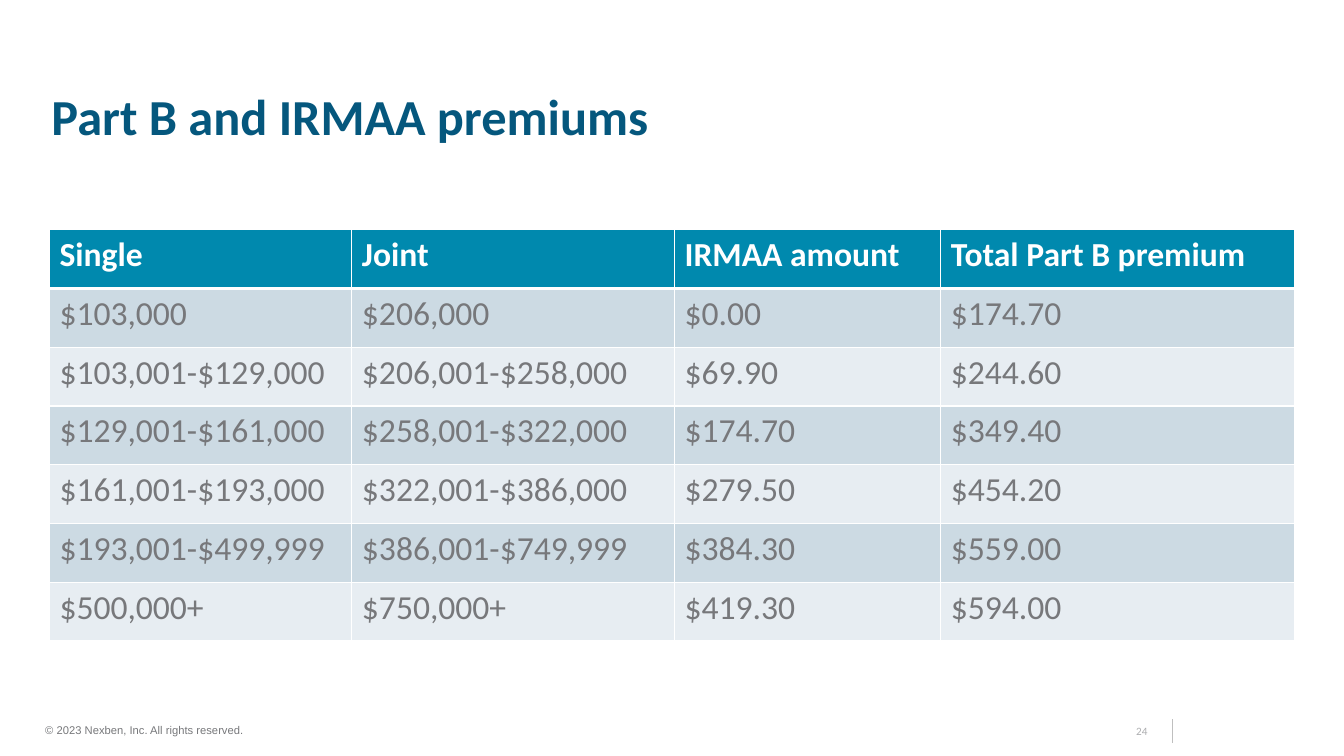
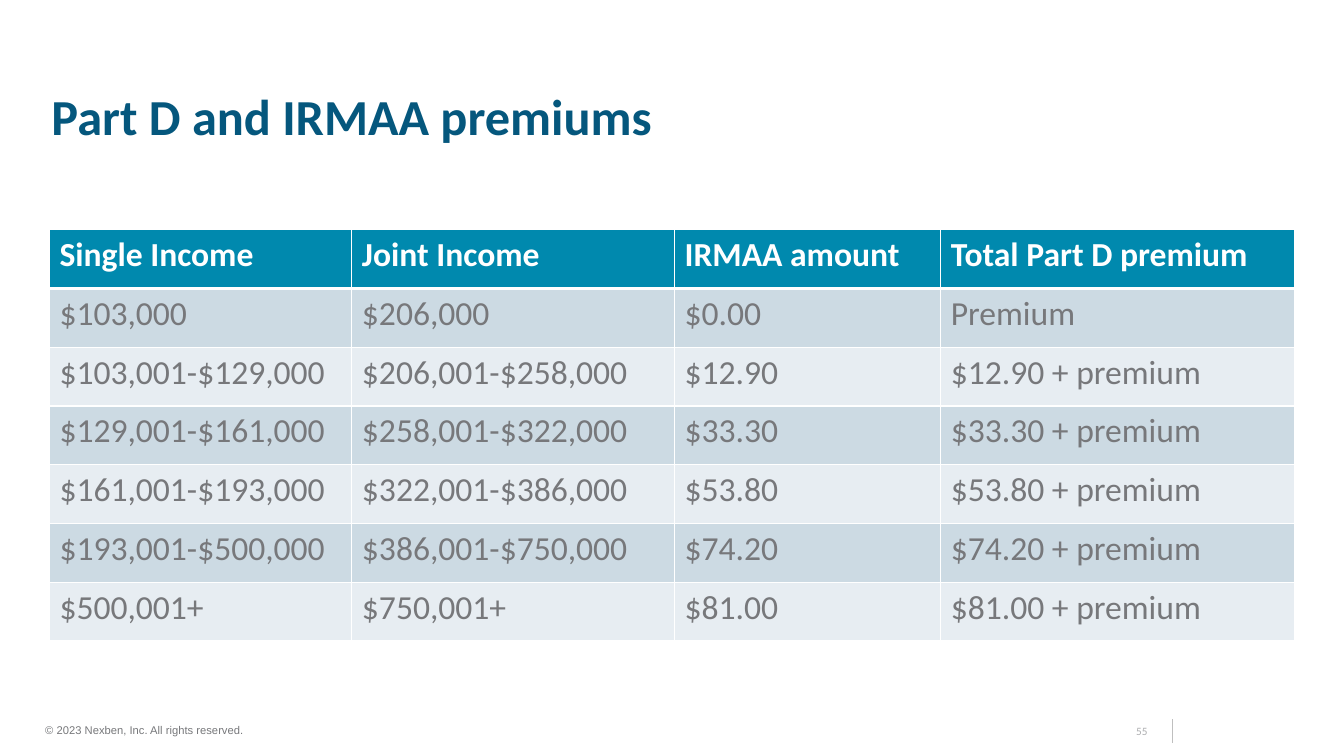
from pptx import Presentation
from pptx.dml.color import RGBColor
from pptx.enum.shapes import MSO_CONNECTOR
from pptx.enum.text import MSO_ANCHOR, MSO_AUTO_SIZE, PP_ALIGN
from pptx.oxml.ns import qn
from pptx.util import Inches, Pt
from lxml.etree import SubElement

WHITE = "FFFFFF"
NAVY = "05577D"
TEAL = "0089AE"
GRAY = "77787B"
PALE = "ADAEB0"
RULE = "BFBFBF"
BANDS = ("E7EDF2", "CCDAE3")
COLS = (3, 3.2, 2.64, 3.51)
ROW = 0.583

PART_B = [
    ("Single", "Joint", "IRMAA amount", "Total Part B premium"),
    ("$103,000", "$206,000", "$0.00", "$174.70"),
    ("$103,001-$129,000", "$206,001-$258,000", "$69.90", "$244.60"),
    ("$129,001-$161,000", "$258,001-$322,000", "$174.70", "$349.40"),
    ("$161,001-$193,000", "$322,001-$386,000", "$279.50", "$454.20"),
    ("$193,001-$499,999", "$386,001-$749,999", "$384.30", "$559.00"),
    ("$500,000+", "$750,000+", "$419.30", "$594.00"),
]
PART_D = [
    ("Single Income", "Joint Income", "IRMAA amount", "Total Part D premium"),
    ("$103,000", "$206,000", "$0.00", "Premium"),
    ("$103,001-$129,000", "$206,001-$258,000", "$12.90", "$12.90 + premium"),
    ("$129,001-$161,000", "$258,001-$322,000", "$33.30", "$33.30 + premium"),
    ("$161,001-$193,000", "$322,001-$386,000", "$53.80", "$53.80 + premium"),
    ("$193,001-$500,000", "$386,001-$750,000", "$74.20", "$74.20 + premium"),
    ("$500,001+", "$750,001+", "$81.00", "$81.00 + premium"),
]


def color(code):
    """Turn a hex string into a colour."""
    return RGBColor.from_string(code)


def write(frame, text, size, code, bold=False, face="Calibri", align=PP_ALIGN.LEFT):
    """Add one styled run to the first paragraph and return the paragraph."""
    para = frame.paragraphs[0]
    para.alignment = align
    run = para.add_run()
    run.text = text
    font = run.font
    font.name, font.size, font.bold = face, Pt(size), bold
    font.color.rgb = color(code)
    return para


def place(shape, left, top, width, height):
    """Set the position and size of a shape."""
    shape.left, shape.top = Inches(left), Inches(top)
    shape.width, shape.height = Inches(width), Inches(height)


def add_title(slide, text):
    """Move and fill the title placeholder."""
    title = slide.shapes.title
    place(title, 0.41, 0.3, 12.5, 1.2)
    frame = title.text_frame
    frame.auto_size = MSO_AUTO_SIZE.NONE
    frame.vertical_anchor = MSO_ANCHOR.BOTTOM
    write(frame, text, 36, NAVY, bold=True).line_spacing = 0.9


def add_note(slide, box, text, code, **style):
    """Add a small line of footer text and return its frame."""
    frame = slide.shapes.add_textbox(*map(Inches, box)).text_frame
    frame.word_wrap = True
    frame.vertical_anchor = MSO_ANCHOR.BOTTOM
    write(frame, text, 8, code, **style)
    return frame


def add_footer(slide, number):
    """Add the copyright line, page number and upright rule."""
    ends = map(Inches, (11.63, 7.37, 11.63, 7.13))
    rule = slide.shapes.add_connector(MSO_CONNECTOR.STRAIGHT, *ends)
    rule.line.color.rgb = color(RULE)
    rule.line.width = Pt(0.5)
    SubElement(rule._element.spPr, qn("a:effectLst"))
    add_note(slide, (0.35, 7.12, 2.26, 0.24),
             "© 2023 Nexben, Inc. All rights reserved.", GRAY, face="Arial")
    page = add_note(slide, (10.97, 7.13, 0.51, 0.24), str(number), PALE,
                    align=PP_ALIGN.RIGHT)
    page.margin_left = 0


def add_edge(cell, side, width):
    """Draw one white cell border."""
    edge = SubElement(cell._tc.get_or_add_tcPr(), qn("a:" + side), w=str(Pt(width)))
    fill = SubElement(edge, qn("a:solidFill"))
    SubElement(fill, qn("a:srgbClr"), val=WHITE)


def style_cell(cell, text, row):
    """Fill a cell by its row, heading first and then bands."""
    head = row == 0
    widths = {"lnL": 1, "lnR": 1, "lnT": 3 if row == 1 else 1, "lnB": 3 if head else 1}
    for side, width in widths.items():
        add_edge(cell, side, width)
    cell.fill.solid()
    cell.fill.fore_color.rgb = color(TEAL if head else BANDS[row % 2])
    write(cell.text_frame, text, 24, WHITE if head else GRAY, bold=head)


def add_grid(slide, rows):
    """Add the premium table."""
    box = map(Inches, (0.49, 2.28, sum(COLS), ROW * len(rows)))
    table = slide.shapes.add_table(len(rows), len(COLS), *box).table
    for col, width in zip(table.columns, COLS):
        col.width = Inches(width)
    for r, texts in enumerate(rows):
        for c, text in enumerate(texts):
            style_cell(table.cell(r, c), text, r)


def main():
    """Build and save the slides."""
    deck = Presentation()
    deck.slide_width, deck.slide_height = Inches(13.33), Inches(7.5)
    pages = (("Part B and IRMAA premiums", 24, PART_B),
             ("Part D and IRMAA premiums", 55, PART_D))
    for title, number, rows in pages:
        slide = deck.slides.add_slide(deck.slide_layouts[5])
        add_footer(slide, number)
        add_title(slide, title)
        add_grid(slide, rows)
    deck.save("out.pptx")


if __name__ == "__main__":
    main()
